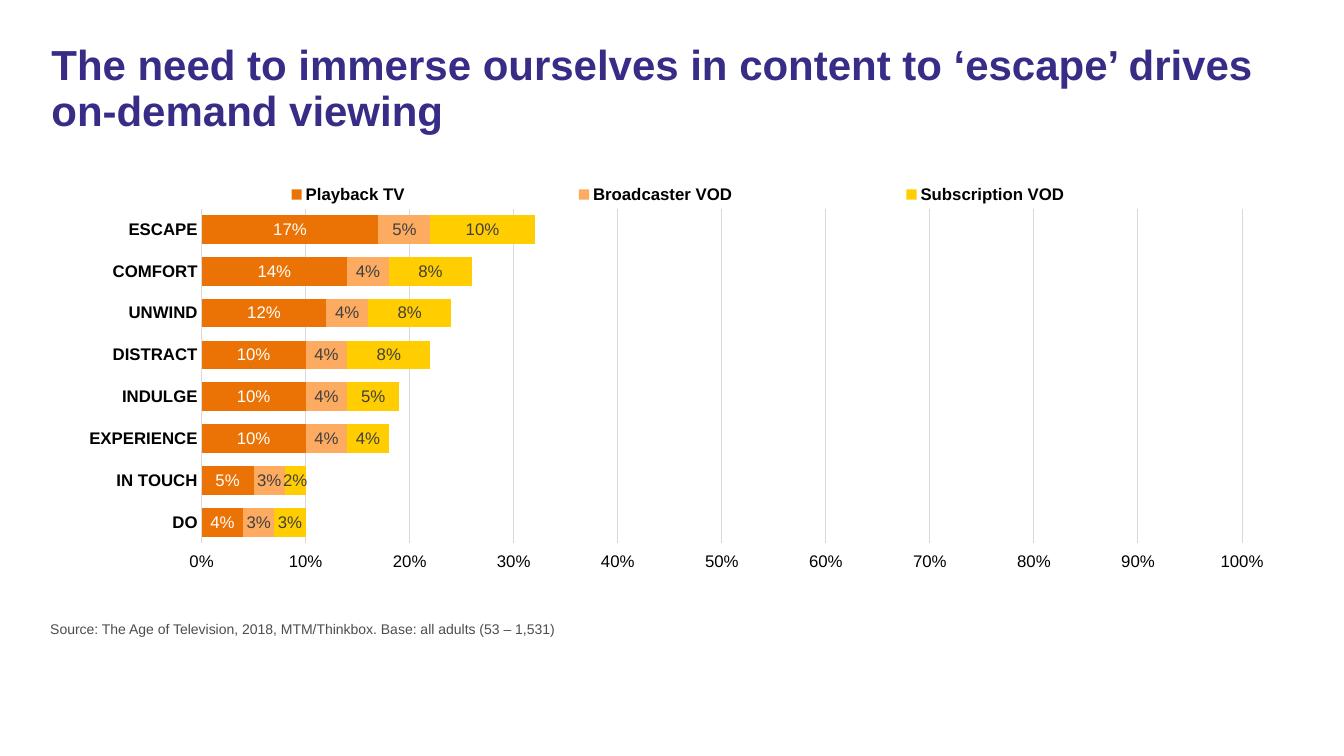
import pptx
import pptx.chart.data
import pptx.dml.color
import pptx.enum.chart
import pptx.enum.text
import pptx.oxml
import pptx.util
from pptx.util import Inches

RGB = pptx.dml.color.RGBColor
PURPLE = RGB(0x37, 0x2D, 0x87)
ORANGE = RGB(0xEB, 0x73, 0x05)
PEACH = RGB(0xFC, 0xAB, 0x60)
YELLOW = RGB(0xFF, 0xCD, 0x00)
WHITE = RGB(0xFF, 0xFF, 0xFF)
BLACK = RGB(0x00, 0x00, 0x00)
DARK = RGB(0x40, 0x40, 0x40)
GREY = RGB(0x4D, 0x4D, 0x4D)
PALE = RGB(0xD9, 0xD9, 0xD9)

WIDTH, HEIGHT = 11.95, 4.05  # chart size in inches
NEEDS = ["ESCAPE", "COMFORT", "UNWIND", "DISTRACT",
         "INDULGE", "EXPERIENCE", "IN TOUCH", "DO"]
# name, percentages, bar colour, label colour
SERIES = [
    ("Playback TV", [17, 14, 12, 10, 10, 10, 5, 4], ORANGE, WHITE),
    ("Broadcaster VOD", [5, 4, 4, 4, 4, 4, 3, 3], PEACH, DARK),
    ("Subscription VOD", [10, 8, 8, 8, 5, 4, 2, 3], YELLOW, DARK),
]


def style(font, size, color, bold=False):
    font.color.rgb = color
    looks = {"name": "Arial", "size": pptx.util.Pt(size), "bold": bold}
    for key, value in looks.items():
        setattr(font, key, value)


def lay_out(x, y, w, h, inner=False):
    """Return a manual layout for a place in the chart, given in inches."""
    parts = [("layoutTarget", "inner")] if inner else []
    parts += [("xMode", "edge"), ("yMode", "edge"), ("x", x / WIDTH),
              ("y", y / HEIGHT), ("w", w / WIDTH), ("h", h / HEIGHT)]
    body = "".join(f'<c:{tag} val="{val}"/>' for tag, val in parts)
    return pptx.oxml.parse_xml(
        '<c:layout xmlns:c="http://schemas.openxmlformats.org/drawingml/2006/chart">'
        f"<c:manualLayout>{body}</c:manualLayout></c:layout>")


deck = pptx.Presentation()
deck.slide_width, deck.slide_height = Inches(13.33), Inches(7.5)
slide = deck.slides.add_slide(deck.slide_layouts[5])

# Title and source line
title = slide.shapes.title
title.left, title.top = Inches(0.41), Inches(0.39)
title.width, title.height = Inches(12.4), Inches(1.12)
source = slide.shapes.add_textbox(Inches(0.4), Inches(6.11), Inches(12.4), Inches(0.33))
for box, text, size, color, bold, pitch in [
    (title, "The need to immerse ourselves in content to ‘escape’ drives on-demand viewing",
     30, PURPLE, True, 0.9),
    (source, "Source: The Age of Television, 2018, MTM/Thinkbox. Base: all adults (53 – 1,531)",
     10, GREY, False, 1.0),
]:
    frame = box.text_frame
    frame.text = text
    frame.word_wrap = True
    frame.auto_size = pptx.enum.text.MSO_AUTO_SIZE.NONE
    frame.vertical_anchor = pptx.enum.text.MSO_ANCHOR.TOP
    line = frame.paragraphs[0]
    line.alignment = pptx.enum.text.PP_ALIGN.LEFT
    line.line_spacing = pitch
    style(line.runs[0].font, size, color, bold)

# Chart
data = pptx.chart.data.CategoryChartData(number_format="0%")
data.categories = NEEDS
for name, shares, fill, ink in SERIES:
    data.add_series(name, [share / 100 for share in shares])
chart = slide.shapes.add_chart(
    pptx.enum.chart.XL_CHART_TYPE.BAR_STACKED,
    Inches(0.66), Inches(1.64), Inches(WIDTH), Inches(HEIGHT), data).chart
style(chart.font, 10, BLACK)
chart.has_title = False

plot = chart.plots[0]
plot.gap_width, plot.overlap, plot.vary_by_categories = 46, 100, False
for bars, (name, shares, fill, ink) in zip(plot.series, SERIES):
    bars.format.fill.solid()
    bars.format.fill.fore_color.rgb = fill
    labels = bars.data_labels
    labels.show_value = True
    labels.number_format, labels.number_format_is_linked = "0%", False
    style(labels.font, 12, ink)

# Axes
needs, scale = chart.category_axis, chart.value_axis
for axis, bold in [(needs, True), (scale, False)]:
    axis.major_tick_mark = axis.minor_tick_mark = pptx.enum.chart.XL_TICK_MARK.NONE
    axis.format.line.fill.background()
    style(axis.tick_labels.font, 12, BLACK, bold)
needs.reverse_order = True
scale.tick_label_position = pptx.enum.chart.XL_TICK_LABEL_POSITION.HIGH
scale.minimum_scale, scale.maximum_scale, scale.major_unit = 0, 1, 0.1
scale.tick_labels.number_format = "0%"
scale.tick_labels.number_format_is_linked = False
grid = scale.major_gridlines.format.line
grid.color.rgb, grid.width = PALE, pptx.util.Pt(0.75)

# Legend above the bars
chart.has_legend = True
legend = chart.legend
legend.position = pptx.enum.chart.XL_LEGEND_POSITION.BOTTOM
legend.include_in_layout = False
style(legend.font, 12, BLACK, True)
key = legend._element
key.find("{*}legendPos").addnext(lay_out(0.56, 0.13, 11.01, 0.32))
area = chart._chartSpace.chart.plotArea
for old in area.findall("{*}layout"):
    area.remove(old)
area.insert(0, lay_out(1.34, 0.43, 10.32, 3.32, inner=True))

deck.save("out.pptx")
